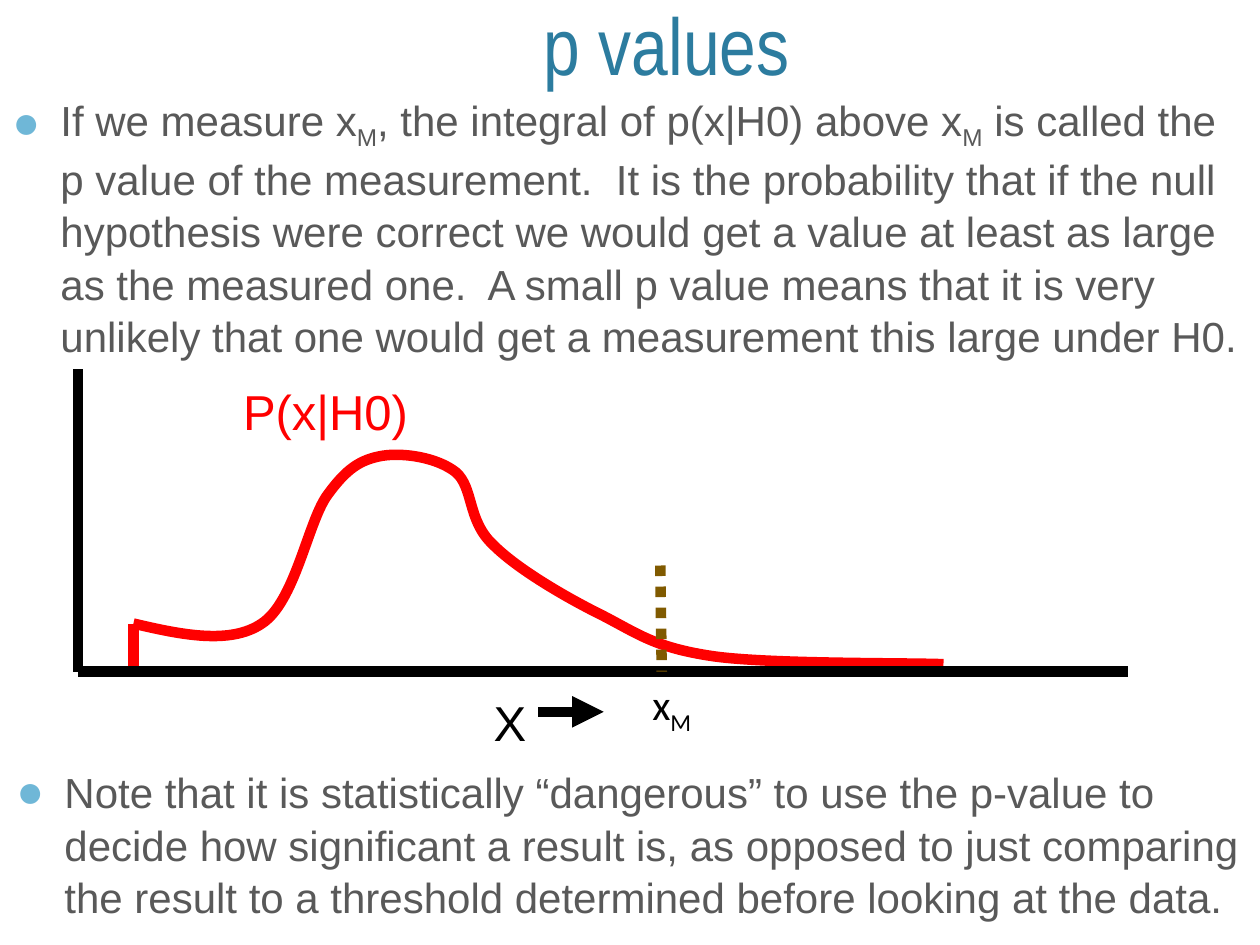
from lxml import etree
from pptx import Presentation
from pptx import util as u
from pptx.dml.color import RGBColor
from pptx.enum import dml, shapes, text
from pptx.oxml.ns import qn

COLORS = {"title": "2C7C9F", "body": "595959", "bullet": "6FB7D7",
          "curve": "FF0000", "axis": "000000", "measured": "805A00"}

deck = Presentation()
deck.slide_width, deck.slide_height = u.Cm(25.4), u.Cm(19.05)
page = deck.slides.add_slide(deck.slide_layouts[6])


def add_text(place, pieces, size, color, font="Arial", wrap=True, bullet=False):
    """Add a one-paragraph box; every second piece is a subscript."""
    box = page.shapes.add_textbox(*(u.Cm(value) for value in place))
    box.text_frame.word_wrap = wrap
    para = box.text_frame.paragraphs[0]
    if bullet:
        props = para._p.get_or_add_pPr()
        props.set("marL", str(u.Cm(0.97)))
        props.set("indent", str(u.Cm(-0.97)))
        tint = etree.SubElement(props, qn("a:buClr"))
        etree.SubElement(tint, qn("a:srgbClr"), val=COLORS["bullet"])
        etree.SubElement(props, qn("a:buSzPct"), val="110000")
        etree.SubElement(props, qn("a:buFont"), typeface="Arial")
        etree.SubElement(props, qn("a:buChar"), char="●")
        para.line_spacing = 1.04
    for index, piece in enumerate(pieces):
        span = para.add_run()
        span.text = piece
        for name, value in {"name": font, "size": u.Pt(size)}.items():
            setattr(span.font, name, value)
        span.font.color.rgb = RGBColor.from_string(COLORS[color])
        if index % 2:
            span._r.get_or_add_rPr().set("baseline", "-25000")
    return box


def add_line(x1, y1, x2, y2, color):
    line = page.shapes.add_connector(
        shapes.MSO_CONNECTOR.STRAIGHT, *(u.Cm(value) for value in (x1, y1, x2, y2)))
    line.line.color.rgb = RGBColor.from_string(COLORS[color])
    line.line.width = u.Pt(6)
    etree.SubElement(line._element.spPr, qn("a:effectLst"))
    return line


# Title and explanation
title = add_text((2.11, 0.2, 22.66, 1.78), ["p values"], 46, "title", "Arial Narrow")
title.text_frame.vertical_anchor = text.MSO_ANCHOR.BOTTOM
title.text_frame.paragraphs[0].alignment = text.PP_ALIGN.CENTER

add_text((0, 1.73, 25.4, 5.56), [
    "If we measure x", "M", ", the integral of p(x|H0) above x", "M",
    " is called the p value of the measurement.  It is the probability that if the "
    "null hypothesis were correct we would get a value at least as large as the "
    "measured one.  A small p value means that it is very unlikely that one would "
    "get a measurement this large under H0."], 24, "body", bullet=True)

# Density curve: a start point, then two handles and an end point per segment
curve_points = [
    (2.69, 12.57),
    (3.66, 12.8), (4.65, 13), (5.28, 12.57),
    (5.94, 12.14), (6.2, 10.57), (6.58, 10.01),
    (6.98, 9.45), (7.26, 9.27), (7.7, 9.19),
    (8.13, 9.12), (8.81, 9.22), (9.19, 9.52),
    (9.55, 9.83), (9.42, 10.49), (9.93, 10.97),
    (10.41, 11.46), (11.4, 12.04), (12.17, 12.42),
    (12.9, 12.8), (13.23, 13.06), (14.38, 13.23),
    (15.52, 13.39), (18.24, 13.36), (19.02, 13.39),
]
points = [(u.Cm(x), u.Cm(y)) for x, y in curve_points]
builder = page.shapes.build_freeform(*points[0])
builder.add_line_segments(points[1:], close=False)
curve = builder.convert_to_shape()
curve.shadow.inherit = False
curve.fill.background()
curve.line.color.rgb = RGBColor.from_string(COLORS["curve"])
curve.line.width = u.Pt(6)

# Turn each three straight steps into one Bezier segment
steps = list(curve._element.iter(qn("a:lnTo")))
outline = steps[0].getparent()
for start in range(0, len(steps), 3):
    bezier = etree.SubElement(outline, qn("a:cubicBezTo"))
    for step in steps[start:start + 3]:
        bezier.append(step[0])
        outline.remove(step)

# Axes and left edge of the curve
origin_x, origin_y, edge_x = 1.57, 13.54, 2.69
add_line(edge_x, 12.57, edge_x, origin_y, "curve")
add_line(edge_x, origin_y, origin_x, origin_y, "axis")
add_text((4.65, 7.57, 3.89, 1.45), ["P(x|H0)"], 28, "curve", wrap=False)
add_line(origin_x, 7.44, origin_x, origin_y, "axis")
add_line(origin_x, origin_y, 22.73, origin_y, "axis")

# Axis label with arrow
add_text((9.7, 13.84, 1.17, 1.45), ["X"], 28, "axis", wrap=False)
arrow = add_line(10.85, 14.35, 12.17, 14.35, "axis")
etree.SubElement(arrow.line._get_or_add_ln(), qn("a:tailEnd"), type="triangle")

# Measured value
marker = add_line(13.31, 11.4, 13.34, origin_y, "measured")
marker.line.dash_style = dml.MSO_LINE.ROUND_DOT

# Closing note
add_text((0.08, 15.29, 25.4, 3.76), [
    "Note that it is statistically “dangerous” to use the p-value to decide how "
    "significant a result is, as opposed to just comparing the result to a threshold "
    "determined before looking at the data."], 24, "body", bullet=True)
add_text((12.9, 13.56, 1.42, 1.27), ["x", "M"], 24, "axis", "Calibri", wrap=False)

deck.save("out.pptx")
